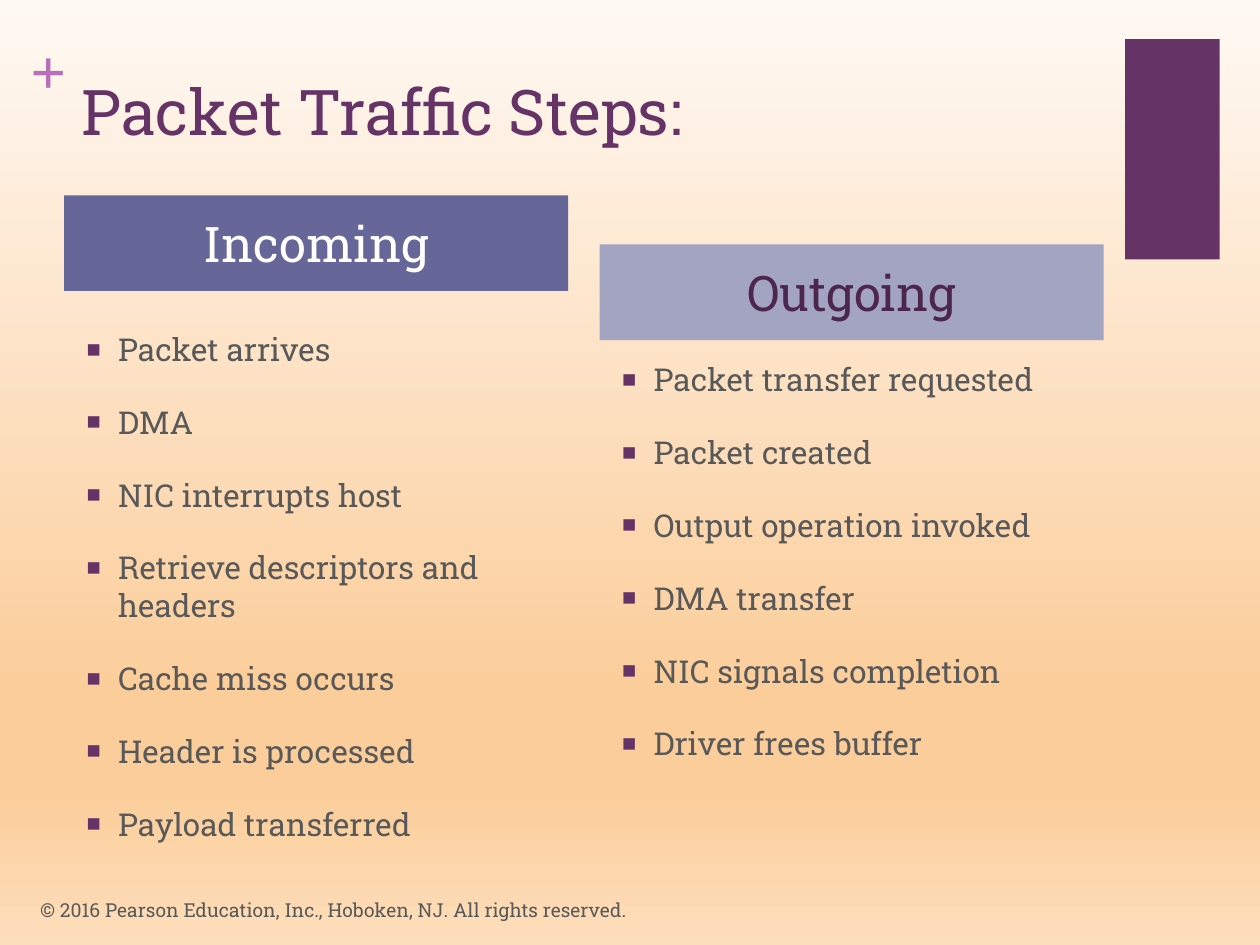
from dataclasses import dataclass

from lxml.etree import SubElement
from pptx import Presentation
from pptx.dml.color import RGBColor
from pptx.enum.shapes import MSO_SHAPE
from pptx.enum.text import MSO_ANCHOR, PP_ALIGN
from pptx.oxml.ns import qn
from pptx.slide import Slide
from pptx.util import Inches, Pt

PLUM = RGBColor(0x66, 0x33, 0x66)
DARK_PLUM = RGBColor(0x4D, 0x26, 0x4D)
ORCHID = RGBColor(0xB8, 0x70, 0xB8)
SLATE = RGBColor(0x66, 0x66, 0x99)
LAVENDER = RGBColor(0xA3, 0xA3, 0xC2)
GRAY = RGBColor(0x59, 0x59, 0x59)
WHITE = RGBColor(0xFF, 0xFF, 0xFF)
CREAM = RGBColor(0xFF, 0xF9, 0xF4)
APRICOT = RGBColor(0xFB, 0xCD, 0x9A)
PEACH = RGBColor(0xFD, 0xDE, 0xBB)

BACKDROP = [(0, CREAM), (74, APRICOT), (83, APRICOT), (100, PEACH)]
COLUMNS, ROWS = 100, 75

INCOMING = ["Packet arrives", "DMA", "NIC interrupts host",
            "Retrieve descriptors and headers", "Cache miss occurs",
            "Header is processed", "Payload transferred"]
OUTGOING = ["Packet transfer requested", "Packet created",
            "Output operation invoked", "DMA transfer",
            "NIC signals completion", "Driver frees buffer"]


def add_bullet(paragraph, color):
    props = paragraph._p.get_or_add_pPr()
    props.set("marL", str(Inches(0.25)))
    props.set("indent", str(-Inches(0.25)))
    bullet_color = SubElement(props, qn("a:buClr"))
    SubElement(bullet_color, qn("a:srgbClr"), val=str(color))
    SubElement(props, qn("a:buSzPct"), val="75000")
    SubElement(props, qn("a:buFont"), typeface="Arial")
    SubElement(props, qn("a:buChar"), char="■")


def write(frame, lines, size=18, color=GRAY, font="Roboto Slab", bold=False,
          align=PP_ALIGN.LEFT, anchor=MSO_ANCHOR.TOP, margins=(0.1, 0.05),
          bullet=None, gap=0):
    frame.word_wrap = True
    frame.vertical_anchor = anchor
    frame.margin_left = frame.margin_right = Inches(margins[0])
    frame.margin_top = frame.margin_bottom = Inches(margins[1])
    for index, line in enumerate(lines):
        paragraph = frame.add_paragraph() if index else frame.paragraphs[0]
        if index and gap:
            paragraph.space_before = Pt(gap)
        if bullet is not None:
            add_bullet(paragraph, bullet)
        paragraph.alignment = align
        run = paragraph.add_run()
        run.text = line
        run.font.size = Pt(size)
        run.font.name = font
        run.font.bold = bold
        run.font.color.rgb = color


@dataclass
class Deck:
    slide: Slide
    width: int
    height: int

    def place(self, column, row, columns, rows):
        across, down = self.width / COLUMNS, self.height / ROWS
        return (round(column * across), round(row * down),
                round(columns * across), round(rows * down))

    def backdrop(self, stops):
        fill = self.slide.background.fill
        fill.gradient()
        gradient = self.slide.background._cSld.find(".//" + qn("a:gradFill"))
        stop_list = gradient.find(qn("a:gsLst"))
        for old in list(stop_list):
            stop_list.remove(old)
        for percent, color in stops:
            stop = SubElement(stop_list, qn("a:gs"), pos=str(percent * 1000))
            SubElement(stop, qn("a:srgbClr"), val=str(color))
        fill.gradient_angle = 270

    def block(self, area, color):
        block = self.slide.shapes.add_shape(MSO_SHAPE.RECTANGLE, *self.place(*area))
        block.shadow.inherit = False
        block.fill.solid()
        block.fill.fore_color.rgb = color
        block.line.fill.background()
        return block

    def text(self, area, *lines, **style):
        box = self.slide.shapes.add_textbox(*self.place(*area))
        write(box.text_frame, lines, **style)

    def heading(self, area, label, fill, color):
        write(self.block(area, fill).text_frame, [label], size=28, color=color,
              align=PP_ALIGN.CENTER, anchor=MSO_ANCHOR.MIDDLE, margins=(0.1, 0))

    def steps(self, area, items):
        self.text(area, *items, bullet=PLUM, gap=20)


def main():
    presentation = Presentation()
    presentation.slide_width, presentation.slide_height = Inches(10), Inches(7.5)
    slide = presentation.slides.add_slide(presentation.slide_layouts[6])
    deck = Deck(slide, presentation.slide_width, presentation.slide_height)

    deck.backdrop(BACKDROP)
    deck.block((89.3, 3.1, 7.5, 17.5), PLUM)
    deck.text((2.4, 2.5, 2.9, 6.1), "+", size=36, color=ORCHID,
              font="Times New Roman", bold=True, margins=(0, 0))
    deck.text((5.5, 5.3, 82.6, 12.2), "Packet Traffic Steps:", size=36, color=PLUM)

    directions = [
        ("Incoming", INCOMING, 5.1, 15.5, 25.7, SLATE, WHITE),
        ("Outgoing", OUTGOING, 47.6, 19.4, 28.1, LAVENDER, DARK_PLUM),
    ]
    for label, items, left, heading_row, steps_row, fill, color in directions:
        deck.steps((left + 0.8, steps_row, 40, 40.2), items)
        deck.heading((left, heading_row, 40, 7.6), label, fill, color)

    deck.text((2.2, 70.2, 67, 4),
              "© 2016 Pearson Education, Inc., Hoboken, NJ. All rights reserved.",
              size=11, anchor=MSO_ANCHOR.MIDDLE)
    presentation.save("out.pptx")


if __name__ == "__main__":
    main()
